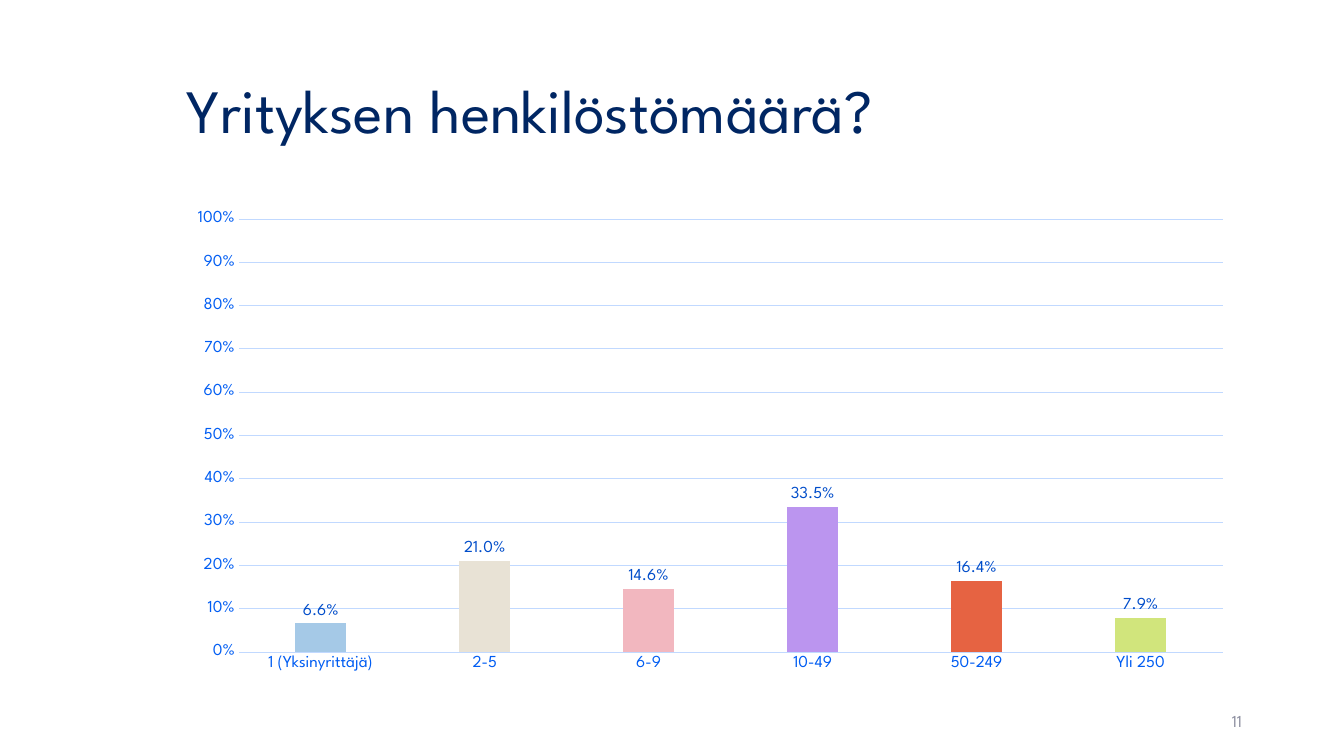
from pptx import Presentation
from pptx.chart.data import CategoryChartData
from pptx.dml.color import RGBColor
from pptx.enum.chart import XL_CHART_TYPE, XL_LABEL_POSITION, XL_TICK_MARK
from pptx.enum.text import MSO_ANCHOR, PP_ALIGN
from pptx.util import Cm, Pt

FONT = "League Spartan"
NAVY = "002663"
AXIS_BLUE = "005DF3"
LABEL_BLUE = "004DCA"
LINE_BLUE = "C1D9FF"
GREY = "8C8E9F"

HEADCOUNTS = [
    ("1 (Yksinyrittäjä)", 0.066, "A5C9E7"),
    ("2-5", 0.21, "E8E2D5"),
    ("6-9", 0.146, "F2B7BF"),
    ("10-49", 0.335, "BB95EF"),
    ("50-249", 0.164, "E66342"),
    ("Yli 250", 0.079, "D1E57C"),
]


def color(hex_string):
    return RGBColor.from_string(hex_string)


def style_font(font, size, hex_string):
    font.name = FONT
    font.size = Pt(size)
    font.color.rgb = color(hex_string)


def style_line(line):
    line.color.rgb = color(LINE_BLUE)
    line.width = Pt(0.75)


def add_text(slide, box, text, size, hex_string, alignment=PP_ALIGN.LEFT, spacing=1.0):
    shape = slide.shapes.add_textbox(*box)
    text_frame = shape.text_frame
    text_frame.word_wrap = True
    text_frame.vertical_anchor = MSO_ANCHOR.MIDDLE
    text_frame.text = text
    paragraph = text_frame.paragraphs[0]
    paragraph.alignment = alignment
    paragraph.line_spacing = spacing
    style_font(paragraph.runs[0].font, size, hex_string)


def style_axes(chart):
    for axis in (chart.category_axis, chart.value_axis):
        axis.major_tick_mark = XL_TICK_MARK.NONE
        axis.minor_tick_mark = XL_TICK_MARK.NONE
        style_font(axis.tick_labels.font, 12, AXIS_BLUE)
    style_line(chart.category_axis.format.line)

    value_axis = chart.value_axis
    value_axis.minimum_scale = 0
    value_axis.maximum_scale = 1
    value_axis.major_unit = 0.1
    value_axis.tick_labels.number_format = "0%"
    value_axis.tick_labels.number_format_is_linked = False
    value_axis.format.line.fill.background()
    style_line(value_axis.major_gridlines.format.line)


def add_headcount_chart(slide, box):
    categories, values, fills = zip(*HEADCOUNTS)
    chart_data = CategoryChartData()
    chart_data.categories = categories
    chart_data.add_series("Series 1", values)
    chart = slide.shapes.add_chart(XL_CHART_TYPE.COLUMN_CLUSTERED, *box, chart_data).chart
    chart.has_legend = False
    chart.has_title = False
    style_font(chart.font, 10, NAVY)
    style_axes(chart)

    plot = chart.plots[0]
    plot.vary_by_categories = False
    plot.gap_width = 219
    plot.overlap = -27
    series = plot.series[0]
    for index, fill in enumerate(fills):
        point_fill = series.points[index].format.fill
        point_fill.solid()
        point_fill.fore_color.rgb = color(fill)

    labels = series.data_labels
    labels.show_value = True
    labels.number_format = "0.0%"
    labels.number_format_is_linked = False
    labels.position = XL_LABEL_POSITION.OUTSIDE_END
    style_font(labels.font, 12, LABEL_BLUE)


def build_chart_slide(presentation):
    slide = presentation.slides.add_slide(presentation.slide_layouts[6])
    left, width = Cm(4.45), Cm(26.9)
    add_text(slide, (left, Cm(1.02), width, Cm(3.68)),
             "Yrityksen henkilöstömäärä?", 44, NAVY, spacing=0.9)
    number_width = Cm(7.62)
    number_left = left + width - number_width + Cm(0.2)
    add_text(slide, (number_left, Cm(17.65), number_width, Cm(1.02)),
             "11", 12, GREY, PP_ALIGN.RIGHT)
    add_headcount_chart(slide, (left, Cm(5.08), width, Cm(12.09)))


def main():
    presentation = Presentation()
    presentation.slide_width = Cm(33.87)
    presentation.slide_height = Cm(19.05)
    build_chart_slide(presentation)
    presentation.save("out.pptx")


if __name__ == "__main__":
    main()
